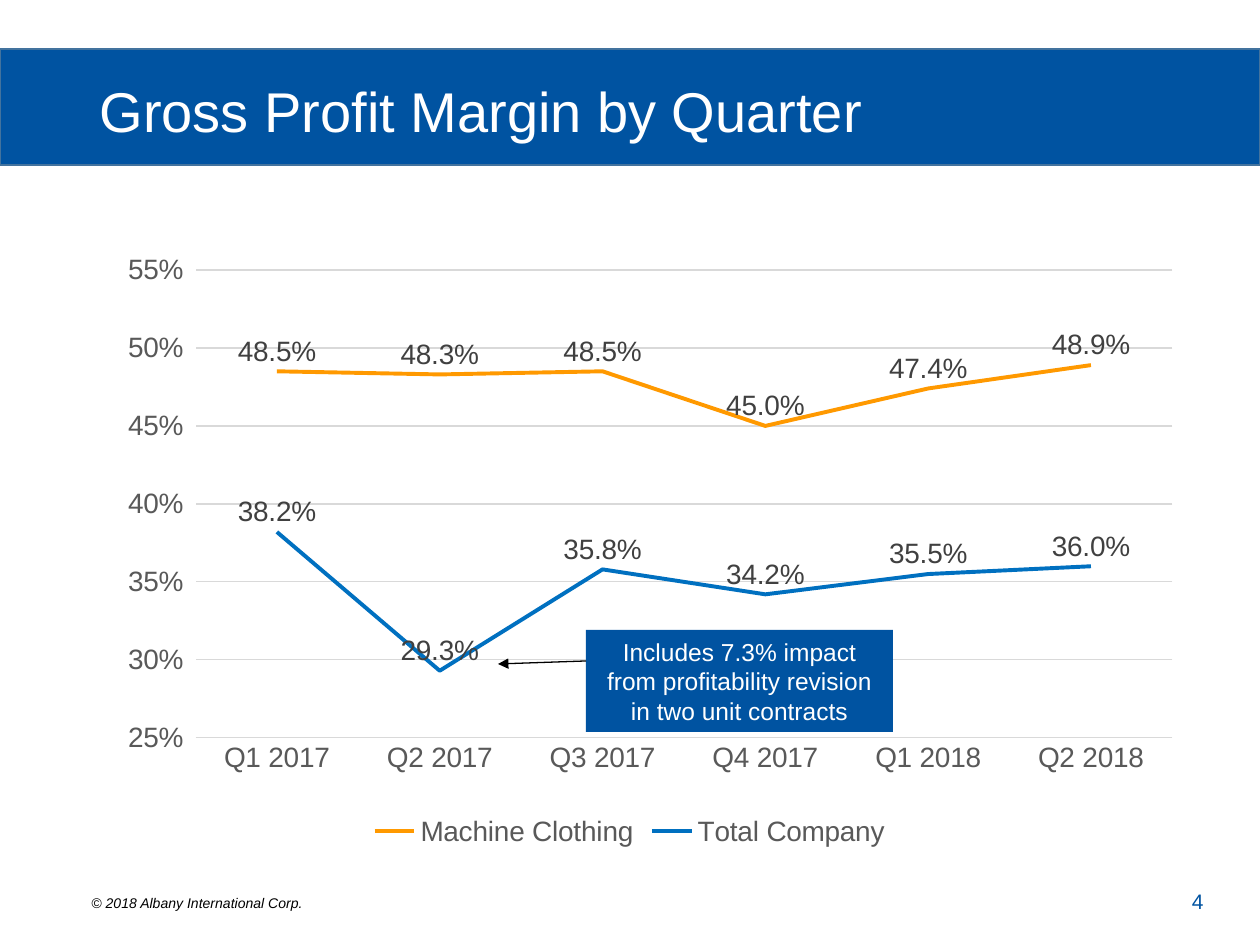
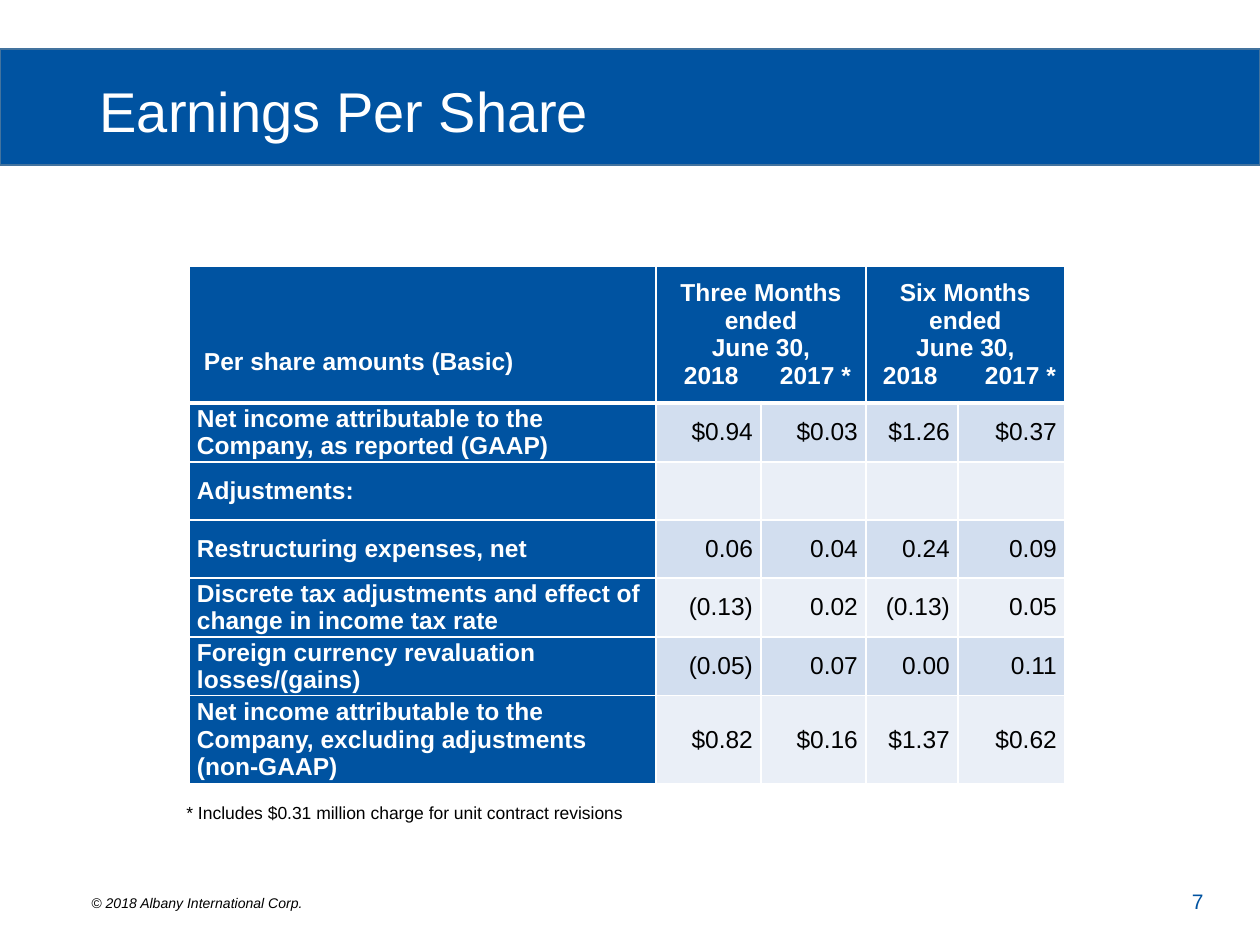
from dataclasses import dataclass
from typing import Any, NamedTuple

from lxml.etree import SubElement
from pptx import Presentation
from pptx.chart.data import CategoryChartData
from pptx.dml.color import RGBColor
from pptx.enum.chart import (XL_CHART_TYPE, XL_LABEL_POSITION,
                             XL_LEGEND_POSITION, XL_TICK_MARK)
from pptx.enum.shapes import MSO_CONNECTOR, MSO_SHAPE
from pptx.enum.text import MSO_ANCHOR, MSO_AUTO_SIZE, PP_ALIGN
from pptx.oxml import parse_xml
from pptx.oxml.ns import nsdecls, qn
from pptx.util import Emu, Pt

FONT = "Arial"
HUES = {
    "blue": "0053A1", "edge": "43739E", "white": "FFFFFF", "black": "000000",
    "grid": "D9D9D9", "axis": "595959", "label": "404040",
    "orange": "FF9900", "sky": "0070C0", "dark": "D2DEEF", "light": "EAEFF7",
}
LEFT, MID, RIGHT = PP_ALIGN.LEFT, PP_ALIGN.CENTER, PP_ALIGN.RIGHT


def px(n: int) -> Emu:
    return Emu(round(n * 914400 / 126))


def hue(name: str) -> RGBColor:
    return RGBColor.from_string(HUES[name])


class Box(NamedTuple):
    x: int
    y: int
    w: int
    h: int

    def emu(self) -> list[Emu]:
        return [px(n) for n in self]


@dataclass(frozen=True)
class Style:
    size: int
    color: str
    bold: bool = False
    slant: bool = False
    align: PP_ALIGN = LEFT

    def font(self, font: Any) -> None:
        font.name, font.size = FONT, Pt(self.size)
        font.bold, font.italic = self.bold, self.slant
        font.color.rgb = hue(self.color)

    def apply(self, frame: Any) -> None:
        for para in frame.paragraphs:
            para.alignment = self.align
            self.font(para.font)
            for run in para.runs:
                self.font(run.font)


class Series(NamedTuple):
    name: str
    color: str
    values: list[float]


class Head(NamedTuple):
    """Heading over two year columns; stops are the tab places of the years."""
    col: int
    text: str
    stops: tuple[int, int]


TITLE = Style(32, "white")
FOOT = Style(8, "black", slant=True)
PAGE = Style(12, "blue", align=RIGHT)
CALL = Style(14, "white", align=MID)
NOTE = Style(10, "black")
AXIS = Style(16, "axis")
LABEL = Style(16, "label")
STUB = Style(14, "white", bold=True)
HEAD = Style(14, "white", bold=True, align=MID)
SUM = Style(14, "black", align=RIGHT)

QUARTERS = ["Q1 2017", "Q2 2017", "Q3 2017", "Q4 2017", "Q1 2018", "Q2 2018"]
MARGINS = [
    Series("Machine Clothing", "orange",
           [0.485, 0.483, 0.485, 0.45, 0.474, 0.489]),
    Series("Total Company", "sky", [0.382, 0.293, 0.358, 0.342, 0.355, 0.36]),
]
PLOT = {"x": 0.1, "y": 0.03, "w": 0.9, "h": 0.78}

WIDTHS = [467, 105, 105, 92, 107]
HEIGHTS = [137, 59, 58, 58, 58, 58, 88]
HEADS = [
    Head(1, "Three Months ended\nJune 30,\n\t2018\t2017 *", (20, 116)),
    Head(3, "Six Months\nended\nJune 30,\n\t2018\t2017 *", (9, 111)),
]
ROWS = [
    ("Net income attributable to the Company, as reported (GAAP)",
     "$0.94", "$0.03", "$1.26", "$0.37"),
    ("Adjustments:", "", "", "", ""),
    ("Restructuring expenses, net", "0.06", "0.04", "0.24", "0.09"),
    ("Discrete tax adjustments and effect of change in income tax rate",
     "(0.13)", "0.02", "(0.13)", "0.05"),
    ("Foreign currency revaluation losses/(gains)",
     "(0.05)", "0.07", "0.00", "0.11"),
    ("Net income attributable to the Company, excluding adjustments (non-GAAP)",
     "$0.82", "$0.16", "$1.37", "$0.62"),
]


def add_text(slide: Any, box: Box, text: str, style: Style,
             anchor: MSO_ANCHOR = MSO_ANCHOR.TOP) -> None:
    frame = slide.shapes.add_textbox(*box.emu()).text_frame
    frame.word_wrap = True
    frame.vertical_anchor = anchor
    frame.text = text
    style.apply(frame)


def add_block(slide: Any, box: Box, edge: str = "") -> Any:
    """Add a blue rectangle, with an outline if an edge colour is given."""
    block = slide.shapes.add_shape(MSO_SHAPE.RECTANGLE, *box.emu())
    block.shadow.inherit = False
    block.fill.solid()
    block.fill.fore_color.rgb = hue("blue")
    if edge:
        block.line.color.rgb = hue(edge)
        block.line.width = Pt(1)
    else:
        block.line.fill.background()
    return block


def add_slide(deck: Any, text: str, page: int) -> Any:
    """Add a slide with the shared band, title, footer and page number."""
    slide = deck.slides.add_slide(deck.slide_layouts[5])
    title = slide.shapes.title
    band = add_block(slide, Box(0, 49, 1260, 116), "edge")
    title.element.addprevious(band.element)
    title.left, title.top, title.width, title.height = Box(87, 23, 1086, 183).emu()
    frame = title.text_frame
    frame.text = text
    frame.auto_size = MSO_AUTO_SIZE.NONE
    frame.vertical_anchor = MSO_ANCHOR.MIDDLE
    frame.paragraphs[0].line_spacing = 0.9
    TITLE.apply(frame)
    add_text(slide, Box(79, 888, 1143, 30),
             "© 2018 Albany International Corp.", FOOT)
    add_text(slide, Box(890, 876, 326, 50), str(page), PAGE, MSO_ANCHOR.MIDDLE)
    return slide


def place_plot(chart: Any) -> None:
    """Fix the inner plot area as shares of the chart."""
    area = chart.element.find(".//" + qn("c:plotArea"))
    for old in area.findall(qn("c:layout")):
        area.remove(old)
    parts = "".join(f'<c:{key} val="{val}"/>' for key, val in PLOT.items())
    area.insert(0, parse_xml(
        f'<c:layout {nsdecls("c")}><c:manualLayout>'
        '<c:layoutTarget val="inner"/><c:xMode val="edge"/><c:yMode val="edge"/>'
        f"{parts}</c:manualLayout></c:layout>"))


def add_margins(slide: Any) -> None:
    data = CategoryChartData(number_format="0.0%")
    data.categories = QUARTERS
    for item in MARGINS:
        data.add_series(item.name, item.values)
    chart = slide.shapes.add_chart(
        XL_CHART_TYPE.LINE, *Box(87, 252, 1086, 600).emu(), data).chart
    NOTE.font(chart.font)
    chart.has_title = False
    chart.has_legend = True
    chart.legend.position = XL_LEGEND_POSITION.BOTTOM
    chart.legend.include_in_layout = False
    AXIS.font(chart.legend.font)

    cats, vals = chart.category_axis, chart.value_axis
    vals.minimum_scale, vals.maximum_scale, vals.major_unit = 0.25, 0.55, 0.05
    for axis in (cats, vals):
        axis.tick_labels.number_format = "0%"
        axis.tick_labels.number_format_is_linked = False
        AXIS.font(axis.tick_labels.font)
    cats.major_tick_mark = XL_TICK_MARK.NONE
    vals.format.line.fill.background()
    for line in (cats.format.line, vals.major_gridlines.format.line):
        line.color.rgb = hue("grid")
        line.width = Pt(0.75)

    plot = chart.plots[0]
    plot.vary_by_categories = False
    for item, series in zip(MARGINS, plot.series):
        series.smooth = False
        series.format.line.color.rgb = hue(item.color)
        series.format.line.width = Pt(2.25)
        labels = series.data_labels
        labels.show_value = True
        labels.position = XL_LABEL_POSITION.ABOVE
        labels.number_format = "0.0%"
        labels.number_format_is_linked = False
        LABEL.font(labels.font)
    place_plot(chart)


def add_call(slide: Any) -> None:
    """Add the remark on the low quarter and its arrow."""
    frame = add_block(slide, Box(586, 630, 307, 102)).text_frame
    frame.word_wrap = True
    frame.text = ("Includes 7.3% impact from profitability revision "
                  "in two unit contracts")
    CALL.apply(frame)
    arrow = slide.shapes.add_connector(
        MSO_CONNECTOR.STRAIGHT, px(586), px(661), px(498), px(664))
    arrow.line.color.rgb = hue("black")
    arrow.line.width = Pt(0.75)
    SubElement(arrow.line._get_or_add_ln(), qn("a:tailEnd"), type="triangle")
    SubElement(arrow.element.spPr, qn("a:effectLst"))


def set_cell(cell: Any, text: str, style: Style, fill: str, row: int) -> None:
    cell.margin_left = cell.margin_right = px(8)
    cell.margin_top = cell.margin_bottom = 0
    cell.vertical_anchor = MSO_ANCHOR.MIDDLE
    cell.text_frame.text = text
    style.apply(cell.text_frame)
    thick = {0: "lnB", 1: "lnT"}.get(row)
    props = cell._tc.get_or_add_tcPr()
    for side in ("lnL", "lnR", "lnT", "lnB"):
        width = Pt(3 if side == thick else 1)
        line = SubElement(props, qn(f"a:{side}"), w=str(width))
        solid = SubElement(line, qn("a:solidFill"))
        SubElement(solid, qn("a:srgbClr"), val=HUES["white"])
    cell.fill.solid()
    cell.fill.fore_color.rgb = hue(fill)


def set_tabs(para: Any, stops: tuple[int, int]) -> None:
    props = para._p.get_or_add_pPr()
    tabs = parse_xml(f'<a:tabLst {nsdecls("a")}/>')
    for stop in stops:
        SubElement(tabs, qn("a:tab"), pos=str(px(stop)), algn="l")
    props.insert(0, tabs)
    para.alignment = LEFT


def add_shares(slide: Any) -> None:
    box = Box(189, 266, sum(WIDTHS), sum(HEIGHTS))
    table = slide.shapes.add_table(len(HEIGHTS), len(WIDTHS), *box.emu()).table
    for col, width in zip(table.columns, WIDTHS):
        col.width = px(width)
    for row, height in zip(table.rows, HEIGHTS):
        row.height = px(height)

    titles = {0: "Per share amounts (Basic)"}
    titles.update({head.col: head.text for head in HEADS})
    for col in range(len(WIDTHS)):
        style = HEAD if col else STUB
        set_cell(table.cell(0, col), titles.get(col, ""), style, "blue", 0)
    first = table.cell(0, 0)
    first.vertical_anchor = MSO_ANCHOR.BOTTOM
    first.margin_left, first.margin_bottom = px(15), px(27)
    for head in HEADS:
        cell = table.cell(0, head.col)
        cell.merge(table.cell(0, head.col + 1))
        set_tabs(cell.text_frame.paragraphs[-1], head.stops)

    for row, texts in enumerate(ROWS, 1):
        shade = "dark" if row % 2 else "light"
        for col, text in enumerate(texts):
            style, fill = (SUM, shade) if col else (STUB, "blue")
            set_cell(table.cell(row, col), text, style, fill, row)


def main() -> None:
    deck = Presentation()
    deck.slide_width, deck.slide_height = px(1260), px(945)

    slide = add_slide(deck, "Gross Profit Margin by Quarter", 4)
    add_margins(slide)
    add_call(slide)

    slide = add_slide(deck, "Earnings Per Share", 7)
    add_text(slide, Box(174, 796, 490, 34),
             "* Includes $0.31 million charge for unit contract revisions", NOTE)
    add_shares(slide)

    deck.save("out.pptx")


if __name__ == "__main__":
    main()
